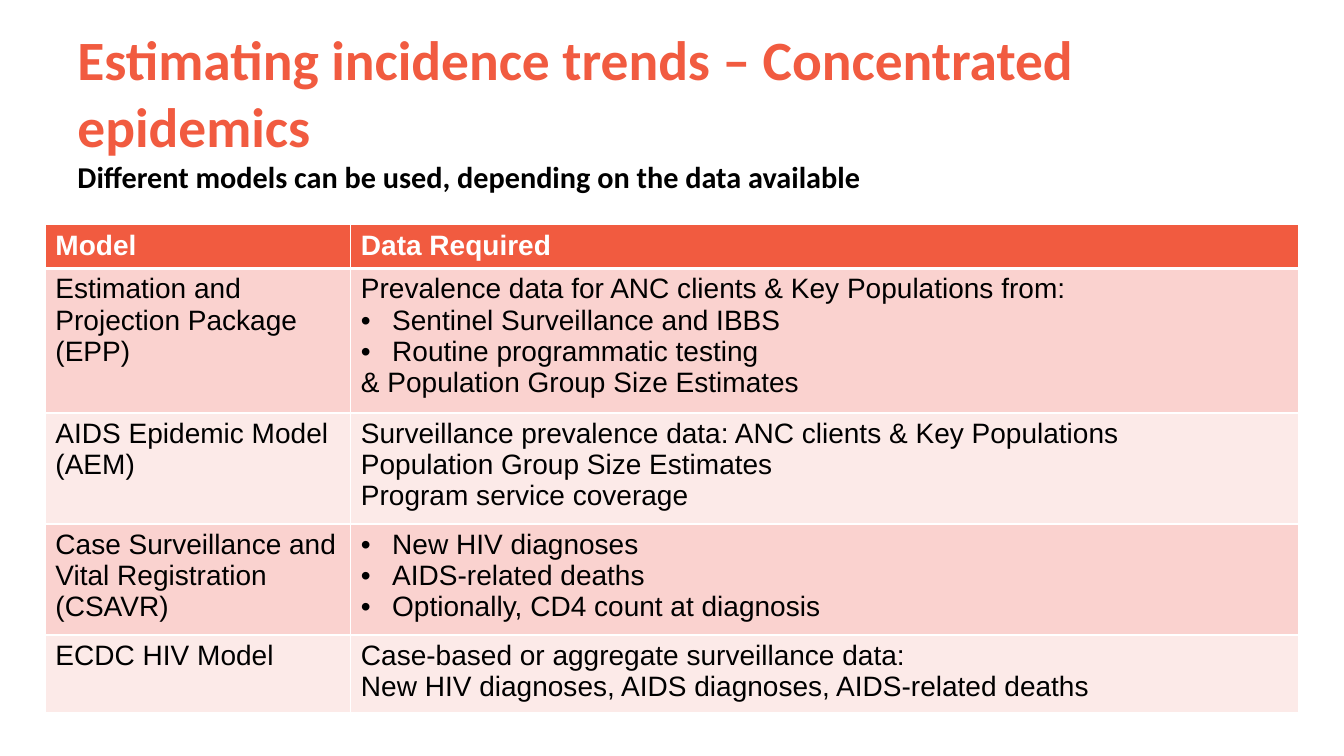
from lxml.etree import SubElement
from pptx import Presentation
from pptx.dml.color import RGBColor as RGB
from pptx.enum.text import MSO_ANCHOR as Anchor
from pptx.oxml.ns import qn
from pptx.util import Inches, Pt

TITLE = "Estimating incidence trends – Concentrated epidemics"
SUB = "Different models can be used, depending on the data available"
DOT = "• "  # marks a bulleted line in the data below
ROWS = [
    ("Model", ["Data Required"]),
    ("Estimation and Projection Package (EPP)", [
        "Prevalence data for ANC clients & Key Populations from:",
        "• Sentinel Surveillance and IBBS",
        "• Routine programmatic testing",
        "& Population Group Size Estimates"]),
    ("AIDS Epidemic Model (AEM)", [
        "Surveillance prevalence data: ANC clients & Key Populations",
        "Population Group Size Estimates",
        "Program service coverage"]),
    ("Case Surveillance and Vital Registration (CSAVR)", [
        "• New HIV diagnoses",
        "• AIDS-related deaths",
        "• Optionally, CD4 count at diagnosis"]),
    ("ECDC HIV Model", [
        "Case-based or aggregate surveillance data:",
        "New HIV diagnoses, AIDS diagnoses, AIDS-related deaths"]),
]
COLS = (3.03, 9.4)
LEFT, TOP = 0.45, 2.23
LINE, PAD = 0.31, 0.1
INDENT = 0.31

ORANGE = RGB(0xF1, 0x5B, 0x40)
PINK = RGB(0xFA, 0xD2, 0xCF)
PALE = RGB(0xFC, 0xEA, 0xE8)
WHITE = RGB(0xFF, 0xFF, 0xFF)
BLACK = RGB(0, 0, 0)


def add_run(para, text, font, size, color, bold):
    run = para.add_run()
    run.text = text
    run.font.name = font
    run.font.size = Pt(size)
    run.font.color.rgb = color
    run.font.bold = bold


def add_bullet(para):
    props = para._p.get_or_add_pPr()
    props.set("marL", str(Inches(INDENT)))
    props.set("indent", str(-Inches(INDENT)))
    SubElement(props, qn("a:buFont"), typeface="Arial")
    SubElement(props, qn("a:buChar"), char=DOT.strip())


def set_edges(cell, widths):
    """Draw white borders; widths maps a side (L, R, T, B) to points."""
    props = cell._tc.get_or_add_tcPr()
    for at, (side, width) in enumerate(widths.items()):
        edge = props.makeelement(qn("a:ln" + side), {"w": str(Pt(width))})
        fill = SubElement(edge, qn("a:solidFill"))
        SubElement(fill, qn("a:srgbClr"), val=str(WHITE))
        props.insert(at, edge)


def fill_cell(cell, lines, row):
    head = row == 0
    cell.fill.solid()
    cell.fill.fore_color.rgb = ORANGE if head else PINK if row % 2 else PALE
    set_edges(cell, {"L": 1, "R": 1, "T": 3 if row == 1 else 1,
                     "B": 3 if head else 1})
    frame = cell.text_frame
    for i, line in enumerate(lines):
        para = frame.add_paragraph() if i else frame.paragraphs[0]
        if line.startswith(DOT):
            add_bullet(para)
        add_run(para, line.removeprefix(DOT), "Arial", 20,
                WHITE if head else BLACK, head)


def add_title(slide):
    box = slide.shapes.add_textbox(
        Inches(0.67), Inches(0.3), Inches(12), Inches(1.58))
    frame = box.text_frame
    frame.word_wrap = True
    frame.vertical_anchor = Anchor.MIDDLE
    para = frame.paragraphs[0]
    add_run(para, TITLE, "Calibri", 39.6, ORANGE, True)
    para.add_line_break()
    add_run(para, SUB, "Calibri", 21.6, BLACK, True)


def add_models(slide):
    highs = [PAD + LINE * len(lines) for _, lines in ROWS]
    table = slide.shapes.add_table(
        len(ROWS), len(COLS), Inches(LEFT), Inches(TOP),
        Inches(sum(COLS)), Inches(sum(highs))).table
    for col, width in zip(table.columns, COLS):
        col.width = Inches(width)
    for r, (model, lines) in enumerate(ROWS):
        table.rows[r].height = Inches(highs[r])
        fill_cell(table.cell(r, 0), [model], r)
        fill_cell(table.cell(r, 1), lines, r)


def main():
    deck = Presentation()
    deck.slide_width, deck.slide_height = Inches(13.33), Inches(7.5)
    slide = deck.slides.add_slide(deck.slide_layouts[6])
    add_title(slide)
    add_models(slide)
    deck.save("out.pptx")


if __name__ == "__main__":
    main()
